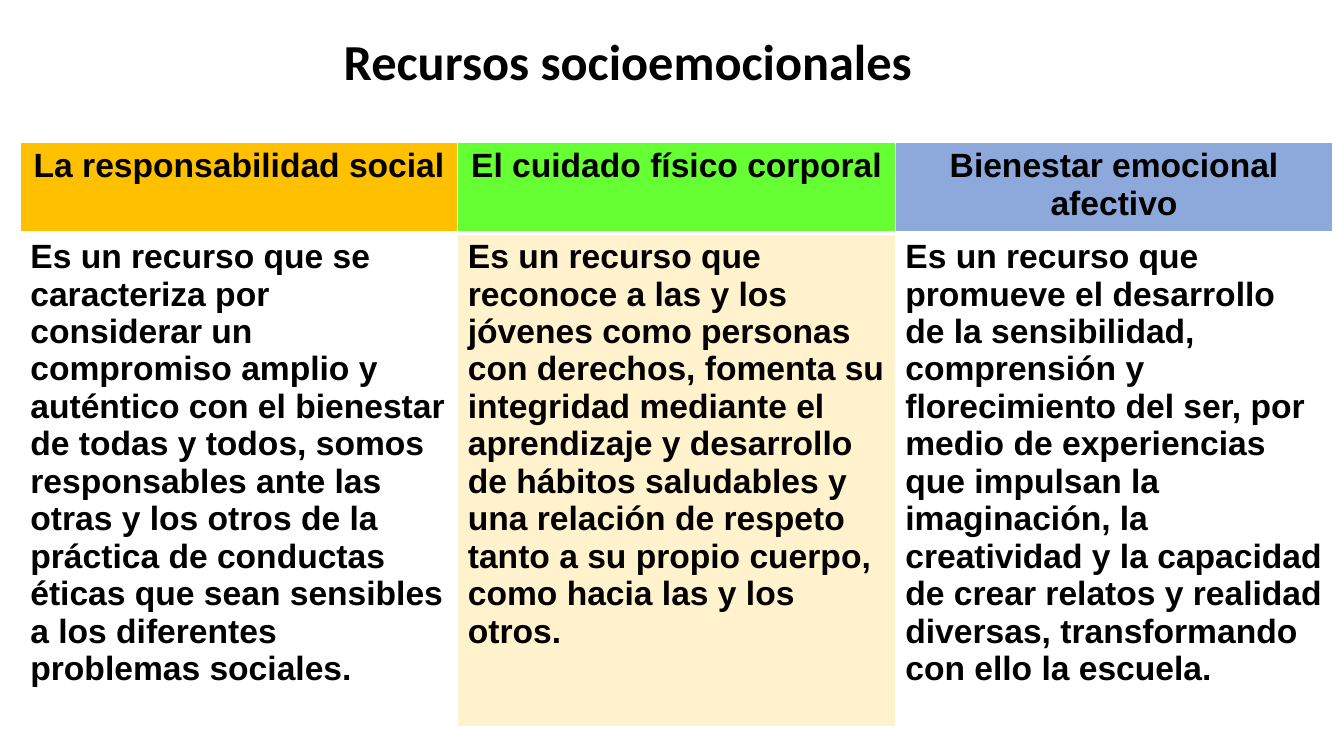
from lxml import etree
from pptx import Presentation
from pptx.dml.color import RGBColor
from pptx.enum import text
from pptx.oxml import ns
from pptx.util import Pt

BLACK = RGBColor(0x00, 0x00, 0x00)
WHITE = RGBColor(0xFF, 0xFF, 0xFF)
AMBER = RGBColor(0xFF, 0xC0, 0x00)
GREEN = RGBColor(0x66, 0xFF, 0x33)
BLUE = RGBColor(0x8D, 0xA9, 0xDB)
CREAM = RGBColor(0xFF, 0xF2, 0xCC)

# heading, heading fill, description, description fill
RESOURCES = [
    ("La responsabilidad social", AMBER,
     "Es un recurso que se caracteriza por considerar un compromiso amplio y "
     "auténtico con el bienestar de todas y todos, somos responsables ante las "
     "otras y los otros de la práctica de conductas éticas que sean sensibles a "
     "los diferentes problemas sociales.", WHITE),
    ("El cuidado físico corporal", GREEN,
     "Es un recurso que reconoce a las y los jóvenes como personas con derechos, "
     "fomenta su integridad mediante el aprendizaje y desarrollo de hábitos "
     "saludables y una relación de respeto tanto a su propio cuerpo, como hacia "
     "las y los otros.", CREAM),
    ("Bienestar emocional afectivo", BLUE,
     "Es un recurso que promueve el desarrollo de la sensibilidad, comprensión y "
     "florecimiento del ser, por medio de experiencias que impulsan la "
     "imaginación, la creatividad y la capacidad de crear relatos y realidad "
     "diversas, transformando con ello la escuela.", WHITE),
]
HEADER_HEIGHT = 65


def style_paragraph(para, font_name, size, alignment):
    para.alignment = alignment
    para.font.name = font_name
    para.font.size = Pt(size)
    para.font.bold = True
    para.font.color.rgb = BLACK


def set_borders(cell, **widths):
    """Draw white borders; widths maps lnL, lnR, lnT and lnB to points."""
    properties = cell._tc.get_or_add_tcPr()
    for index, side in enumerate(("lnL", "lnR", "lnT", "lnB")):
        line = etree.Element(ns.qn("a:" + side), w=str(Pt(widths.get(side, 1))))
        fill = etree.SubElement(line, ns.qn("a:solidFill"))
        etree.SubElement(fill, ns.qn("a:srgbClr"), val=str(WHITE))
        properties.insert(index, line)


def fill_cell(cell, words, color, alignment, **widths):
    cell.text = words
    cell.fill.solid()
    cell.fill.fore_color.rgb = color
    set_borders(cell, **widths)
    style_paragraph(cell.text_frame.paragraphs[0], "Arial", 24, alignment)


def place_title(page, left, top, width, height):
    title = page.shapes.title
    title.left, title.top = Pt(left), Pt(top)
    title.width, title.height = Pt(width), Pt(height)
    frame = title.text_frame
    frame.text = "Recursos socioemocionales"
    frame.word_wrap = True
    frame.auto_size = text.MSO_AUTO_SIZE.SHAPE_TO_FIT_TEXT
    frame.vertical_anchor = text.MSO_ANCHOR.TOP
    style_paragraph(frame.paragraphs[0], "Calibri", 36, text.PP_ALIGN.LEFT)


def place_resource_table(page, left, top, width, height):
    table = page.shapes.add_table(
        2, len(RESOURCES), Pt(left), Pt(top), Pt(width), Pt(height)).table
    table.horz_banding = False
    table.rows[0].height = Pt(HEADER_HEIGHT)
    table.rows[1].height = Pt(height - HEADER_HEIGHT)
    for column, resource in enumerate(RESOURCES):
        heading, heading_fill, description, description_fill = resource
        fill_cell(table.cell(0, column), heading, heading_fill,
                  text.PP_ALIGN.CENTER, lnB=3)
        fill_cell(table.cell(1, column), description, description_fill,
                  text.PP_ALIGN.LEFT, lnT=3)


def main():
    deck = Presentation()
    deck.slide_width, deck.slide_height = Pt(960), Pt(540)
    page = deck.slides.add_slide(deck.slide_layouts.get_by_name("Title Only"))
    place_resource_table(page, 14.5, 101.5, 937.5, 417.5)
    place_title(page, 238.3, 18, 460.8, 51)
    deck.save("out.pptx")


if __name__ == "__main__":
    main()
